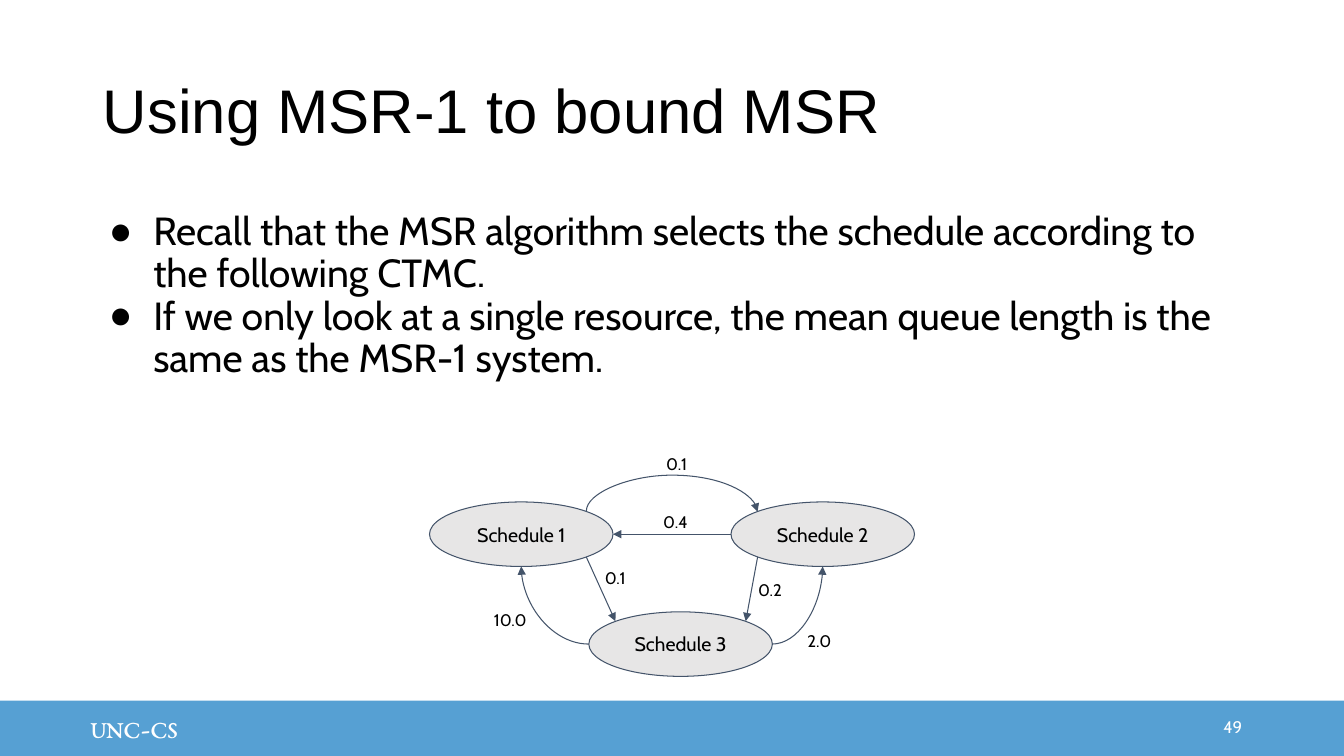
from lxml import etree
from pptx import Presentation
from pptx.dml.color import RGBColor
from pptx.enum import shapes, text
from pptx.oxml import ns
from pptx.util import Inches, Pt

INK, SLATE, GREY, BLUE, WHITE = "000000", "44546A", "E7E6E6", "56A0D3", "FFFFFF"
LEFT, CENTER, RIGHT = text.PP_ALIGN.LEFT, text.PP_ALIGN.CENTER, text.PP_ALIGN.RIGHT
TOP, MIDDLE = text.MSO_ANCHOR.TOP, text.MSO_ANCHOR.MIDDLE


def paint(target, color):
    """Give a font, fill or line one solid colour."""
    if hasattr(target, "solid"):
        target.solid()
        target.fore_color.rgb = RGBColor.from_string(color)
    else:
        target.color.rgb = RGBColor.from_string(color)


def append(parent, tag, **attributes):
    """Add a drawing element to the end of its parent."""
    child = etree.SubElement(parent, ns.qn(tag))
    for name, value in attributes.items():
        child.set(name, value)
    return child


def set_frame(shape, anchor, margins=(0.1, 0.1, 0.1, 0.1)):
    """Set wrapping, anchor and margins of a text frame."""
    frame = shape.text_frame
    frame.word_wrap = True
    frame.auto_size = text.MSO_AUTO_SIZE.NONE
    frame.vertical_anchor = anchor
    (frame.margin_left, frame.margin_top,
     frame.margin_right, frame.margin_bottom) = map(Inches, margins)
    return frame


def style(paragraph, size, font="Cabin", color=INK, align=LEFT):
    """Set the font and alignment of a paragraph."""
    paragraph.alignment = align
    paragraph.font.size = Pt(size)
    paragraph.font.name = font
    paint(paragraph.font, color)


def place(shape, box):
    """Move a shape to a box in inches."""
    shape.left, shape.top, shape.width, shape.height = map(Inches, box)


def add_label(page, box, words, size=12, color=INK, align=LEFT, anchor=TOP):
    """Add a text box with one line."""
    label = page.shapes.add_textbox(*map(Inches, box))
    frame = set_frame(label, anchor)
    frame.text = words
    style(frame.paragraphs[0], size, color=color, align=align)


def add_filled(page, kind, box, color):
    """Add a flat preset shape without an outline."""
    shape = page.shapes.add_shape(kind, *map(Inches, box))
    shape.shadow.inherit = False
    paint(shape.fill, color)
    shape.line.fill.background()
    return shape


def add_footer(page, box):
    """Add the bar with the department name and page number."""
    left, top, width, height = box
    bar = add_filled(page, shapes.MSO_SHAPE.RECTANGLE, box, BLUE)
    frame = set_frame(bar, MIDDLE, (0.9, 0.05, 0.1, 0.05))
    frame.text = "UNC-CS"
    style(frame.paragraphs[0], 18, "EB Garamond", WHITE)
    add_label(page, (left + width - 2.41, top + 0.06, 1.5, 0.4), "49",
              color=WHITE, align=RIGHT, anchor=MIDDLE)


def add_title(page, box, words):
    """Fill the title placeholder."""
    title = page.shapes.title
    place(title, box)
    frame = set_frame(title, MIDDLE)
    frame.text = words
    frame.paragraphs[0].line_spacing = 0.9
    style(frame.paragraphs[0], 44, "Arial")


def add_points(page, box, points):
    """Fill the body placeholder with bulleted points."""
    body = page.placeholders[1]
    place(body, box)
    frame = set_frame(body, TOP)
    frame.text = "\n".join(points)
    for paragraph in frame.paragraphs:
        paragraph.line_spacing = 0.9
        paragraph.space_before = Pt(0)
        properties = paragraph._p.get_or_add_pPr()
        properties.set("marL", str(Inches(0.5)))
        properties.set("indent", str(Inches(-0.44)))
        append(append(properties, "a:buClr"), "a:srgbClr", val=INK)
        append(properties, "a:buChar", char="●")
        style(paragraph, 28)


def add_state(page, box, words):
    """Add one state of the chain."""
    state = add_filled(page, shapes.MSO_SHAPE.OVAL, box, GREY)
    paint(state.line, SLATE)
    state.line.width = Pt(0.75)
    frame = set_frame(state, MIDDLE)
    frame.text = words
    style(frame.paragraphs[0], 14, align=CENTER)


def add_arrow(page, start, end, preset="line"):
    """Add an arrow of the given connector preset."""
    arrow = page.shapes.add_connector(
        shapes.MSO_CONNECTOR.STRAIGHT, *map(Inches, start + end))
    paint(arrow.line, SLATE)
    arrow.line.width = Pt(0.75)
    properties = arrow._element.spPr
    properties.find(ns.qn("a:prstGeom")).set("prst", preset)
    append(properties.find(ns.qn("a:ln")), "a:tailEnd", type="triangle")
    append(properties, "a:effectLst")
    return properties


def add_arch(page, start, end, rise):
    """Add a curved arrow that arches over two points of equal height."""
    middle, half = (start[0] + end[0]) / 2, (end[0] - start[0]) / 2
    thin = 0.01
    properties = add_arrow(page, (middle + thin / 2, start[1] - half),
                           (middle - thin / 2, start[1] + half), "curvedConnector3")
    properties.find(ns.qn("a:xfrm")).set("rot", str(270 * 60000))
    guides = properties.find(ns.qn("a:prstGeom")).find(ns.qn("a:avLst"))
    append(guides, "a:gd", name="adj1", fmla=f"val {round(-rise / thin * 100000)}")


def add_chain(page, box):
    """Draw the three schedules with their transition rates."""
    left, top = box[:2]
    wide, high = 1.82, 0.64
    corners = [(left, top + 0.58), (left + 2.99, top + 0.58), (left + 1.58, top + 1.67)]
    for number, corner in enumerate(corners, 1):
        add_state(page, corner + (wide, high), f"Schedule {number}")

    def rim(state, across, down):
        """Find a point on a state by its offset from the centre in half axes."""
        x, y = corners[state - 1]
        return x + wide / 2 * (1 + across), y + high / 2 * (1 + down)

    slant = 0.71
    add_arch(page, rim(1, slant, -slant), rim(2, -slant, -slant), 0.36)
    add_arrow(page, rim(2, -slant, slant), rim(3, slant, -slant))
    add_arrow(page, rim(2, -1, 0), rim(1, 1, 0))
    add_arrow(page, rim(3, 1, 0), rim(2, 0, 1), "curvedConnector2")
    add_arrow(page, rim(3, -1, 0), rim(1, 0, 1), "curvedConnector2")
    add_arrow(page, rim(1, slant, slant), rim(3, -slant, -slant))

    rates = [("0.1", 2.25, 0), ("0.4", 2.22, 0.58), ("10.0", 0.54, 1.55),
             ("0.1", 1.64, 1.13), ("0.2", 3.16, 1.25), ("2.0", 3.65, 1.76)]
    for rate, across, down in rates:
        add_label(page, (left + across, top + down, 0.6, 0.4), rate)


def main():
    """Build the slide and save it."""
    deck = Presentation()
    deck.slide_width, deck.slide_height = Inches(13.33), Inches(7.5)
    page = deck.slides.add_slide(deck.slide_layouts[1])
    paint(page.background.fill, WHITE)
    add_footer(page, (0, 6.95, 13.33, 0.55))
    add_title(page, (0.92, 0.4, 11.5, 1.45), "Using MSR-1 to bound MSR")
    add_points(page, (0.92, 2, 11.5, 4.76), [
        "Recall that the MSR algorithm selects the schedule according to "
        "the following CTMC.",
        "If we only look at a single resource, the mean queue length is "
        "the same as the MSR-1 system.",
    ])
    add_chain(page, (4.26, 4.4, 4.81, 2.31))
    deck.save("out.pptx")


if __name__ == "__main__":
    main()
